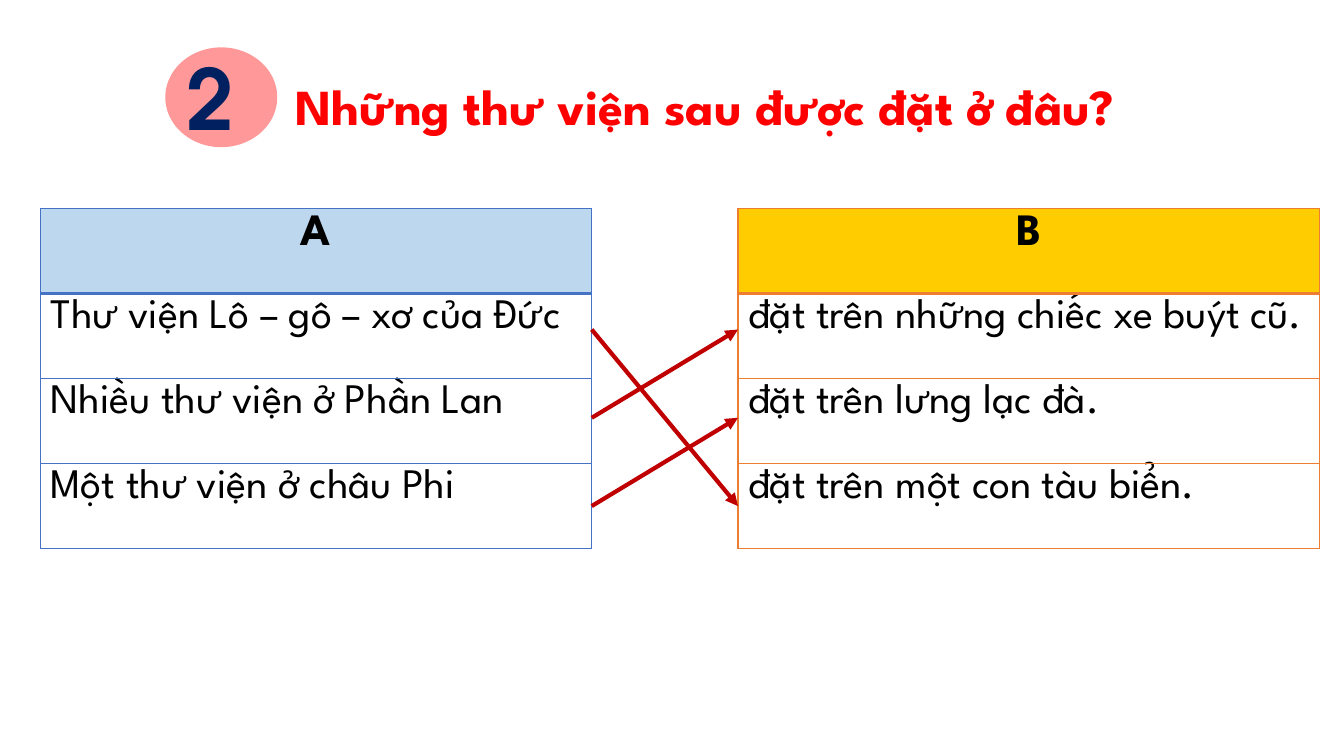
import dataclasses
import pptx
import pptx.dml.color
import pptx.enum.shapes
import pptx.enum.text
import pptx.oxml
import pptx.oxml.ns
import pptx.util

Align = pptx.enum.text.PP_ALIGN
Anchor = pptx.enum.text.MSO_ANCHOR
WIDE, HIGH = pptx.util.Inches(13.33), pptx.util.Inches(7.5)


@dataclasses.dataclass(frozen=True)
class Theme:
    font: str = "League Spartan"
    digit: str = "TeX Gyre Adventor"
    red: str = "FF0000"
    navy: str = "002060"
    pink: str = "FF9999"
    black: str = "000000"
    white: str = "FFFFFF"
    sky: str = "BDD7EE"
    blue: str = "4472C4"
    gold: str = "FFCC00"
    orange: str = "ED7D31"
    arrow: str = "C00000"
    huge: int = 60
    title: int = 36
    head: int = 32
    body: int = 30


T = Theme()
LEFT = ["Thư viện Lô – gô – xơ của Đức", "Nhiều thư viện ở Phần Lan", "Một thư viện ở châu Phi"]
RIGHT = ["đặt trên những chiếc xe buýt cũ.", "đặt trên lưng lạc đà.", "đặt trên một con tàu biển."]
PAIRS = [(0, 2), (1, 0), (2, 1)]

# Shares of the slide, in percent
A_LEFT, A_WIDE = 3, 41.03
B_LEFT, B_WIDE = 54.91, 43.29
TOP, ROW = 27.6, 11.25
LINK_TOP, LINK_STEP = 43.6, 11.67


def across(share):
    return round(WIDE * share / 100)


def down(share):
    return round(HIGH * share / 100)


def area(left, top, wide, high):
    return across(left), down(top), across(wide), down(high)


def color(code):
    return pptx.dml.color.RGBColor.from_string(code)


def write(frame, text, size=T.body, font=T.font, tint=T.black, bold=False, align=Align.LEFT):
    para = frame.paragraphs[0]
    para.alignment = align
    para.line_spacing = 1.0
    run = para.add_run()
    run.text = text
    run.font.size = pptx.util.Pt(size)
    run.font.name = font
    run.font.bold = bold
    run.font.color.rgb = color(tint)


def badge(slide, text):
    oval = slide.shapes.add_shape(
        pptx.enum.shapes.MSO_SHAPE.OVAL, *area(12.3, 6.27, 8.33, 13.2))
    oval.shadow.inherit = False
    oval.fill.solid()
    oval.fill.fore_color.rgb = color(T.pink)
    oval.line.fill.background()
    frame = slide.shapes.add_textbox(*area(12.9, 9.33, 7.13, 6.93)).text_frame
    frame.word_wrap = True
    frame.vertical_anchor = Anchor.MIDDLE
    inset = pptx.util.Inches(0.13)
    frame.margin_left = frame.margin_right = inset
    frame.margin_top = frame.margin_bottom = inset
    write(frame, text, size=T.huge, font=T.digit, tint=T.navy, bold=True, align=Align.JUSTIFY)


def heading(slide, text):
    title = slide.shapes.title
    title.left, title.top, title.width, title.height = area(21.23, 9.33, 71.27, 9.47)
    frame = title.text_frame
    frame.auto_size = pptx.enum.text.MSO_AUTO_SIZE.NONE
    frame.word_wrap = True
    frame.vertical_anchor = Anchor.TOP
    write(frame, text, size=T.title, tint=T.red, bold=True, align=Align.JUSTIFY)


def border(cell, tint, widths):
    """Set the left, right, top and bottom lines, with widths in points."""
    props = cell._tc.get_or_add_tcPr()
    for spot, (side, width) in enumerate(zip("LRTB", widths)):
        props.insert(spot, pptx.oxml.parse_xml(
            f'<a:ln{side} {pptx.oxml.ns.nsdecls("a")} w="{pptx.util.Pt(width)}">'
            f'<a:solidFill><a:srgbClr val="{tint}"/></a:solidFill></a:ln{side}>'))


def listing(slide, left, wide, head, items, fill, edge):
    texts = [head, *items]
    table = slide.shapes.add_table(
        len(texts), 1, *area(left, TOP, wide, ROW * len(texts))).table
    table.first_row = table.horz_banding = False
    for spot, text in enumerate(texts):
        cell = table.cell(spot, 0)
        cell.fill.solid()
        cell.fill.fore_color.rgb = color(T.white if spot else fill)
        border(cell, edge, (1, 1, 1 if spot != 1 else 2, 1 if spot else 2))
        if spot:
            write(cell.text_frame, text)
        else:
            write(cell.text_frame, text, size=T.head, bold=True, align=Align.CENTER)


def arrow(slide, start, end):
    """Link an item of the left table to one of the right table."""
    line = slide.shapes.add_connector(
        pptx.enum.shapes.MSO_CONNECTOR.STRAIGHT,
        across(A_LEFT + A_WIDE), down(LINK_TOP + LINK_STEP * start),
        across(B_LEFT), down(LINK_TOP + LINK_STEP * end))
    line.line.color.rgb = color(T.arrow)
    line.line.width = pptx.util.Pt(3)
    space = pptx.oxml.ns.nsdecls("a")
    line.line._get_or_add_ln().append(
        pptx.oxml.parse_xml(f'<a:tailEnd {space} type="triangle"/>'))
    line._element.spPr.append(pptx.oxml.parse_xml(f"<a:effectLst {space}/>"))


def main():
    deck = pptx.Presentation()
    deck.slide_width, deck.slide_height = WIDE, HIGH
    slide = deck.slides.add_slide(deck.slide_layouts.get_by_name("Title Only"))
    badge(slide, "2")
    heading(slide, "Những thư viện sau được đặt ở đâu?")
    listing(slide, A_LEFT, A_WIDE, "A", LEFT, T.sky, T.blue)
    listing(slide, B_LEFT, B_WIDE, "B", RIGHT, T.gold, T.orange)
    for start, end in PAIRS:
        arrow(slide, start, end)
    deck.save("out.pptx")


if __name__ == "__main__":
    main()
